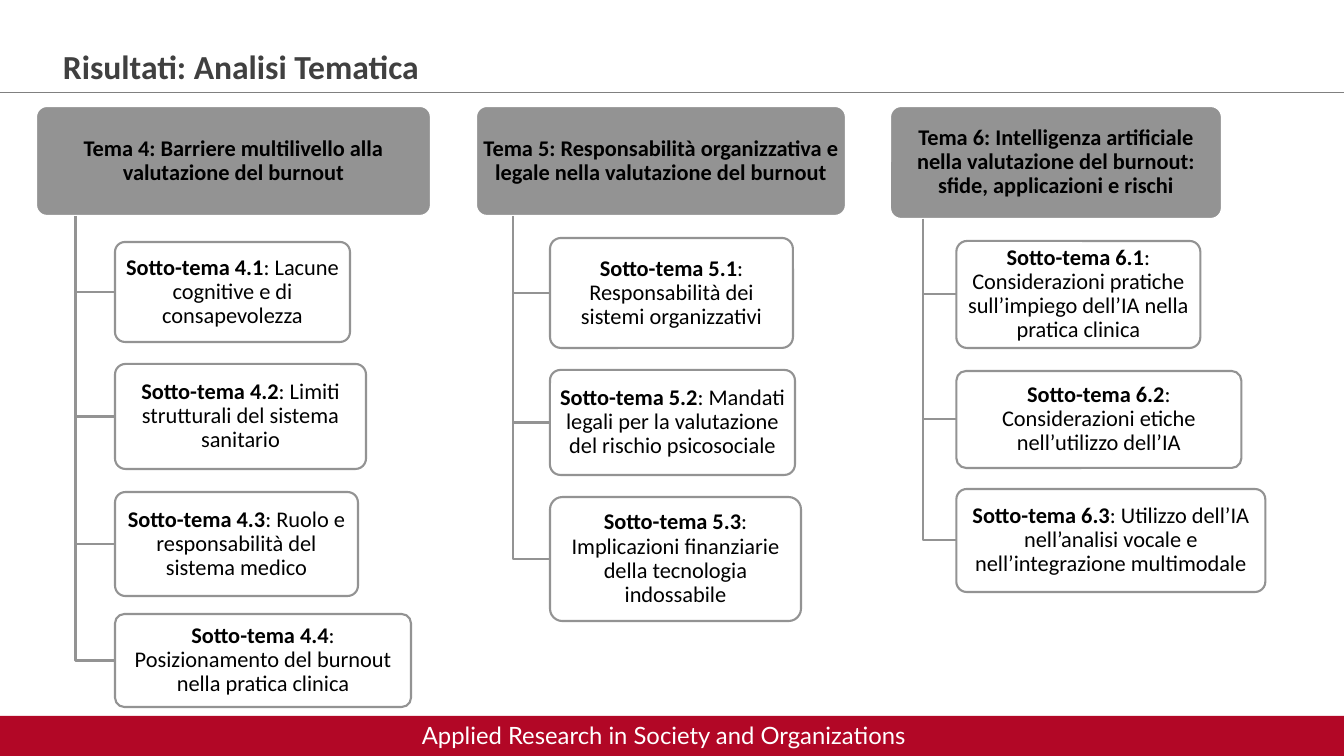
from lxml import etree
from pptx import Presentation
from pptx import util as u
from pptx.dml.color import RGBColor
from pptx.enum import shapes, text
from pptx.oxml import ns

BLACK = RGBColor(0x00, 0x00, 0x00)
WHITE = RGBColor(0xFF, 0xFF, 0xFF)
DARK = RGBColor(0x40, 0x40, 0x40)
RULE = RGBColor(0x80, 0x80, 0x80)
GRAY = RGBColor(0x93, 0x93, 0x93)
RED = RGBColor(0xB2, 0x07, 0x26)

SLIDE_WIDTH, SLIDE_HEIGHT = 1344, 756
THEME_TOP = 106
FOOTER_TOP = 716

THEMES = [
    ((36, 395, 110), "Tema 4: Barriere multilivello alla valutazione del burnout", [
        (242, 235, 100, "Sotto-tema 4.1", ": Lacune cognitive e di consapevolezza"),
        (364, 251, 105, "Sotto-tema 4.2", ": Limiti strutturali del sistema sanitario"),
        (492, 243, 104, "Sotto-tema 4.3", ": Ruolo e responsabilità del sistema medico"),
        (614, 296, 93, "Sotto-tema 4.4", ": Posizionamento del burnout nella pratica clinica"),
    ]),
    ((476, 370, 110), "Tema 5: Responsabilità organizzativa e legale nella valutazione del burnout", [
        (238, 243, 110, "Sotto-tema 5.1", ": Responsabilità dei sistemi organizzativi"),
        (370, 245, 105, "Sotto-tema 5.2", ": Mandati legali per la valutazione del rischio psicosociale"),
        (497, 251, 124, "Sotto-tema 5.3", ": Implicazioni finanziarie della tecnologia indossabile"),
    ]),
    ((890, 332, 113), "Tema 6: Intelligenza artificiale nella valutazione del burnout: "
                      "sfide, applicazioni e rischi", [
        (241, 244, 107, "Sotto-tema 6.1", ": Considerazioni pratiche sull’impiego dell’IA nella pratica clinica"),
        (371, 285, 97, "Sotto-tema 6.2", ": Considerazioni etiche nell’utilizzo dell’IA"),
        (489, 309, 103, "Sotto-tema 6.3", ": Utilizzo dell’IA nell’analisi vocale e nell’integrazione multimodale"),
    ]),
]


def px(value):
    return u.Emu(round(value * 914400 / 100.8))


class Deck:
    font = "Calibri"
    box_size = 16
    line_width = 1.5

    def __init__(self):
        self.presentation = Presentation()
        self.presentation.slide_width = px(SLIDE_WIDTH)
        self.presentation.slide_height = px(SLIDE_HEIGHT)
        self.slide = self.presentation.slides.add_slide(self.presentation.slide_layouts[6])

    def add_runs(self, frame, runs, size, color, font=None):
        frame.word_wrap = True
        paragraph = frame.paragraphs[0]
        paragraph.alignment = text.PP_ALIGN.LEFT
        for words, bold in runs:
            run = paragraph.add_run()
            run.text = words
            run.font.name = font or self.font
            run.font.size = u.Pt(size)
            run.font.bold = bold
            run.font.color.rgb = color
        return paragraph

    def label(self, left, top, width, height, runs, size, color, font=None):
        shape = self.slide.shapes.add_textbox(px(left), px(top), px(width), px(height))
        self.add_runs(shape.text_frame, runs, size, color, font)

    def bar(self, left, top, width, height, color):
        shape = self.slide.shapes.add_shape(
            shapes.MSO_SHAPE.RECTANGLE, px(left), px(top), px(width), px(height))
        shape.shadow.inherit = False
        shape.fill.solid()
        shape.fill.fore_color.rgb = color
        shape.line.fill.background()

    def rule(self, top, color):
        line = self.slide.shapes.add_connector(
            shapes.MSO_CONNECTOR.STRAIGHT, px(SLIDE_WIDTH), px(top), 0, px(top))
        line.line.color.rgb = color
        line.line.width = u.Pt(0.25)
        etree.SubElement(line._element.spPr, ns.qn("a:effectLst"))

    def box(self, left, top, width, height, runs, fill, outline, opacity=100):
        shape = self.slide.shapes.add_shape(
            shapes.MSO_SHAPE.ROUNDED_RECTANGLE, px(left), px(top), px(width), px(height))
        shape.adjustments[0] = 0.1
        shape.shadow.inherit = False
        shape.fill.solid()
        shape.fill.fore_color.rgb = fill
        if opacity < 100:
            color = shape._element.spPr.find(ns.qn("a:solidFill"))[0]
            etree.SubElement(color, ns.qn("a:alpha"), val=str(opacity * 1000))
        shape.line.color.rgb = outline
        shape.line.width = u.Pt(self.line_width)
        frame = shape.text_frame
        frame.margin_left = frame.margin_right = px(3)
        frame.margin_top = frame.margin_bottom = px(2)
        frame.vertical_anchor = text.MSO_ANCHOR.MIDDLE
        paragraph = self.add_runs(frame, runs, self.box_size, BLACK)
        paragraph.alignment = text.PP_ALIGN.CENTER
        paragraph.line_spacing = 0.9

    def elbow(self, left, top, right, bottom):
        builder = self.slide.shapes.build_freeform(px(left), px(top))
        builder.add_line_segments([(px(left), px(bottom)), (px(right), px(bottom))], close=False)
        shape = builder.convert_to_shape()
        shape.shadow.inherit = False
        shape.fill.background()
        shape.line.color.rgb = GRAY
        shape.line.width = u.Pt(self.line_width)

    def theme(self, left, width, height, title, subthemes):
        self.box(left, THEME_TOP, width, height, [(title, True)], GRAY, WHITE)
        trunk = left + width / 10
        branch = left + width / 5
        for top, box_width, box_height, name, description in subthemes:
            self.elbow(trunk, THEME_TOP + height, branch, top + box_height / 2)
            self.box(branch, top, box_width, box_height,
                     [(name, True), (description, False)], WHITE, GRAY, opacity=90)


def main():
    deck = Deck()
    deck.rule(92, RULE)
    deck.bar(0, FOOTER_TOP, SLIDE_WIDTH, SLIDE_HEIGHT - FOOTER_TOP, RED)
    deck.label(53, 41, 994, 92, [("Risultati: Analisi Tematica", True)], 24, DARK)
    deck.label(412, FOOTER_TOP, 511, 39,
               [("Applied Research in Society and Organizations", False)], 17, WHITE, "Lato")
    for place, title, subthemes in THEMES:
        deck.theme(*place, title, subthemes)
    deck.presentation.save("out.pptx")


if __name__ == "__main__":
    main()
